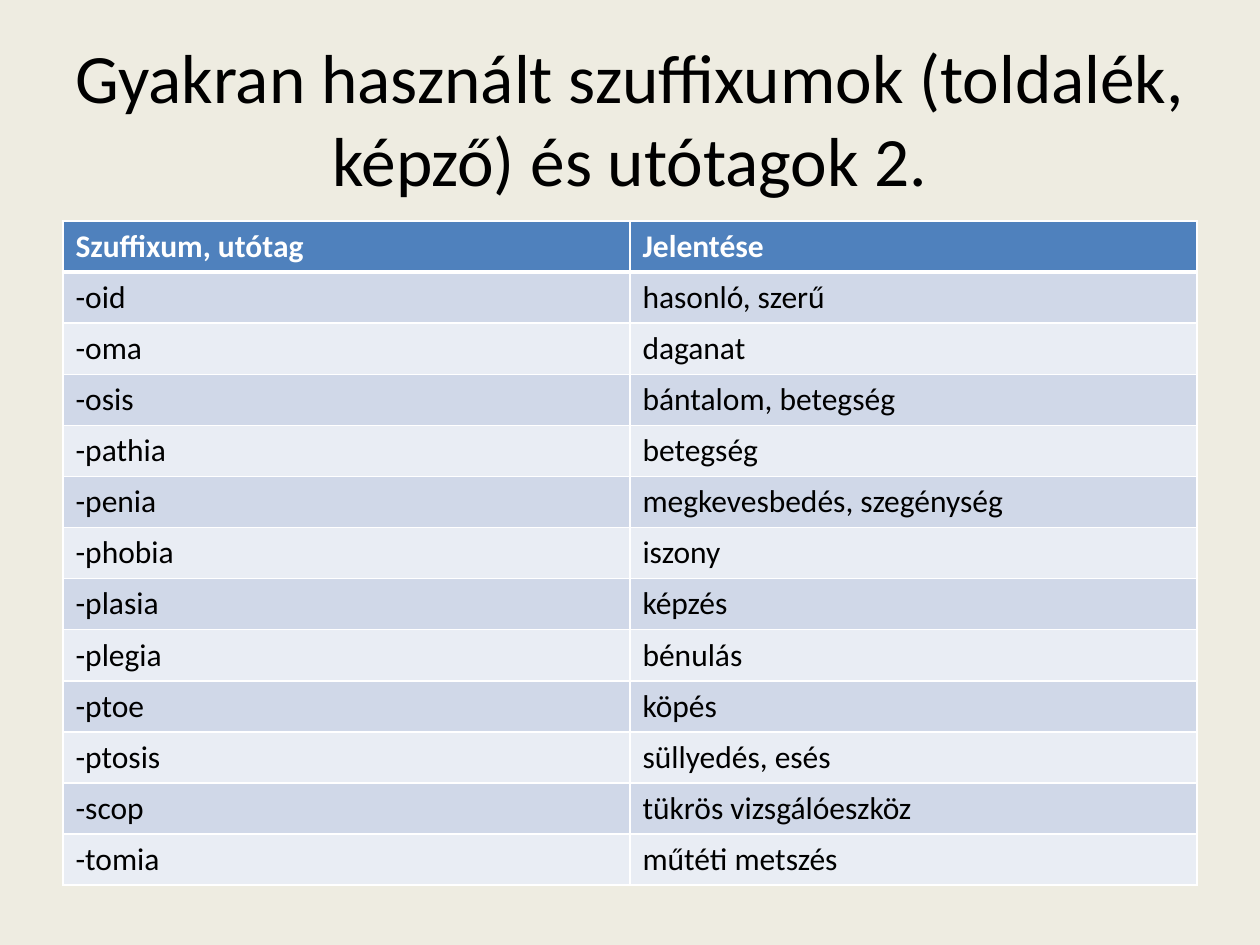
from lxml import etree
from pptx import Presentation
from pptx import util as u
from pptx.dml.color import RGBColor
from pptx.enum import text
from pptx.oxml.ns import qn

PX = 914400 // 126
FONT = "Calibri"
HUES = {"back": "EEECE1", "head": "4F81BD", "odd": "D0D8E8",
        "even": "E9EDF4", "white": "FFFFFF", "black": "000000"}
ROWS = [
    ("Szuffixum, utótag", "Jelentése"),
    ("-oid", "hasonló, szerű"),
    ("-oma", "daganat"),
    ("-osis", "bántalom, betegség"),
    ("-pathia", "betegség"),
    ("-penia", "megkevesbedés, szegénység"),
    ("-phobia", "iszony"),
    ("-plasia", "képzés"),
    ("-plegia", "bénulás"),
    ("-ptoe", "köpés"),
    ("-ptosis", "süllyedés, esés"),
    ("-scop", "tükrös vizsgálóeszköz"),
    ("-tomia", "műtéti metszés"),
]


def write(para, words, size, hue, bold=False):
    run = para.add_run()
    run.text = words
    run.font.name = FONT
    run.font.size = u.Pt(size)
    run.font.bold = bold
    run.font.color.rgb = RGBColor.from_string(HUES[hue])


def edge(cell, sides):
    """Draw white borders, given as (tag, width in points) in schema order."""
    props = cell._tc.get_or_add_tcPr()
    for spot, (tag, width) in enumerate(sides):
        line = etree.Element(qn("a:" + tag), w=str(u.Pt(width)))
        fill = etree.SubElement(line, qn("a:solidFill"))
        etree.SubElement(fill, qn("a:srgbClr"), val=HUES["white"])
        props.insert(spot, line)


# Slide
deck = Presentation()
deck.slide_width, deck.slide_height = u.Inches(10), u.Inches(7.5)
slide = deck.slides.add_slide(deck.slide_layouts[6])
slide.background.fill.solid()
slide.background.fill.fore_color.rgb = RGBColor.from_string(HUES["back"])

# Table of suffixes
left, top, wide, high = 63, 221, 1134, 51
table = slide.shapes.add_table(
    len(ROWS), 2, left * PX, top * PX, wide * PX, len(ROWS) * high * PX).table
for r, row in enumerate(ROWS):
    table.rows[r].height = high * PX
    band = "head" if r == 0 else "odd" if r % 2 else "even"
    for c, words in enumerate(row):
        cell = table.cell(r, c)
        cell.fill.solid()
        cell.fill.fore_color.rgb = RGBColor.from_string(HUES[band])
        edge(cell, [("lnL", 1), ("lnR", 1), ("lnT", 3 if r == 1 else 1),
                    ("lnB", 3 if r == 0 else 1)])
        write(cell.text_frame.paragraphs[0], words, 18,
              "black" if r else "white", r == 0)

# Title
box = slide.shapes.add_textbox(left * PX, 38 * PX, wide * PX, 158 * PX)
frame = box.text_frame
frame.word_wrap = True
frame.vertical_anchor = text.MSO_ANCHOR.MIDDLE
para = frame.paragraphs[0]
para.alignment = text.PP_ALIGN.CENTER
write(para, "Gyakran használt szuffixumok (toldalék, képző) és utótagok 2.",
      39.6, "black")

deck.save("out.pptx")
